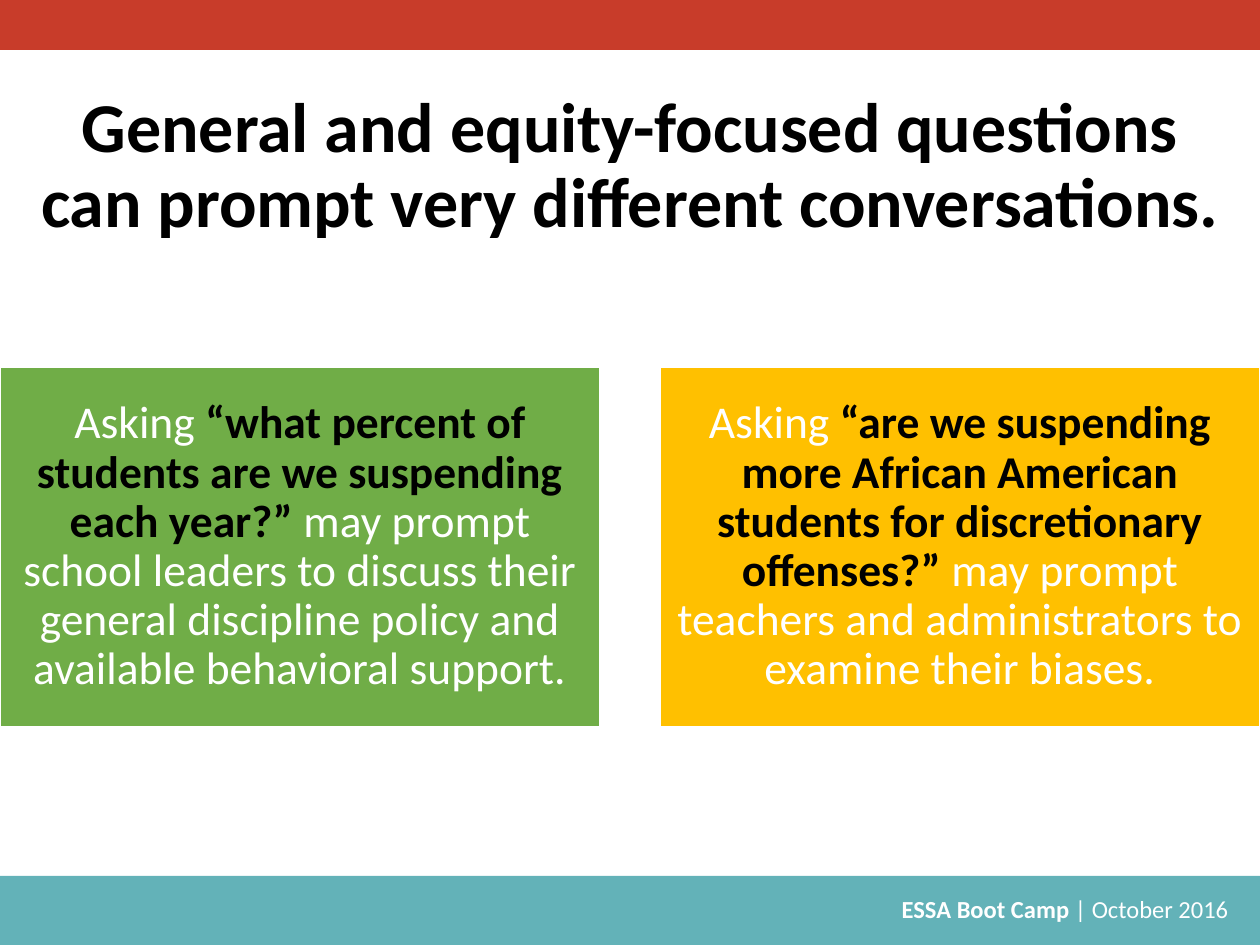
from dataclasses import dataclass

import pptx
import pptx.dml.color
import pptx.enum.shapes
import pptx.enum.text
import pptx.util

PX = 914400 / 126
WIDTH, HEIGHT = 1260, 945
ALIGN = pptx.enum.text.PP_ALIGN


@dataclass(frozen=True)
class Theme:
    font: str = "Calibri"
    red: str = "C83C2A"
    teal: str = "63B2B8"
    green: str = "70AD47"
    gold: str = "FFC000"
    white: str = "FFFFFF"
    black: str = "000000"
    title_size: int = 40
    card_size: int = 26
    footer_size: int = 14


THEME = Theme()


def px(n):
    return pptx.util.Emu(round(n * PX))


def rgb(value):
    return pptx.dml.color.RGBColor.from_string(value)


def add_rect(s, box, fill, line=None):
    sp = s.shapes.add_shape(
        pptx.enum.shapes.MSO_SHAPE.RECTANGLE, *map(px, box))
    sp.shadow.inherit = False
    sp.fill.solid()
    sp.fill.fore_color.rgb = rgb(fill)
    if line:
        sp.line.color.rgb = rgb(line)
        sp.line.width = pptx.util.Pt(1)
    else:
        sp.line.fill.background()
    return sp


def write(sp, runs, size, align, inset, spacing=1.0):
    tf = sp.text_frame
    tf.word_wrap = True
    tf.vertical_anchor = pptx.enum.text.MSO_ANCHOR.MIDDLE
    tf.margin_left = tf.margin_right = px(inset)
    tf.margin_top = tf.margin_bottom = px(inset)
    p = tf.paragraphs[0]
    p.alignment = align
    p.line_spacing = spacing
    for text, color, bold in runs:
        r = p.add_run()
        r.text = text
        r.font.name = THEME.font
        r.font.size = pptx.util.Pt(size)
        r.font.bold = bold
        r.font.color.rgb = rgb(color)


def add_text(s, box, runs, size, align, spacing=1.0):
    sp = s.shapes.add_textbox(*map(px, box))
    write(sp, runs, size, align, 12, spacing)


def add_card(s, box, fill, question, outcome):
    sp = add_rect(s, box, fill, THEME.white)
    runs = [("Asking ", THEME.white, False),
            (question + " ", THEME.black, True),
            (outcome, THEME.white, False)]
    write(sp, runs, THEME.card_size, ALIGN.CENTER, 14, 0.9)


def main():
    prs = pptx.Presentation()
    prs.slide_width, prs.slide_height = px(WIDTH), px(HEIGHT)
    s = prs.slides.add_slide(prs.slide_layouts[6])

    add_rect(s, (0, 876, WIDTH, 69), THEME.teal)
    add_rect(s, (0, 0, WIDTH, 50), THEME.red)
    add_text(s, (454, 887, 792, 43),
             [("ESSA Boot Camp ", THEME.white, True),
              ("| October 2016 ", THEME.white, False)],
             THEME.footer_size, ALIGN.RIGHT)

    cards = [
        (THEME.green,
         "“what percent of students are we suspending each year?”",
         "may prompt school leaders to discuss their general discipline "
         "policy and available behavioral support."),
        (THEME.gold,
         "“are we suspending more African American students for "
         "discretionary offenses?”",
         "may prompt teachers and administrators to examine their biases."),
    ]
    card_width, gap = 600, 60
    for i, card in enumerate(cards):
        add_card(s, (i * (card_width + gap), 367, card_width, 360), *card)

    add_text(s, (28, 76, 1204, 183),
             [("General and equity-focused questions can prompt very "
               "different conversations.", THEME.black, True)],
             THEME.title_size, ALIGN.CENTER, 0.9)

    prs.save("out.pptx")


if __name__ == "__main__":
    main()
